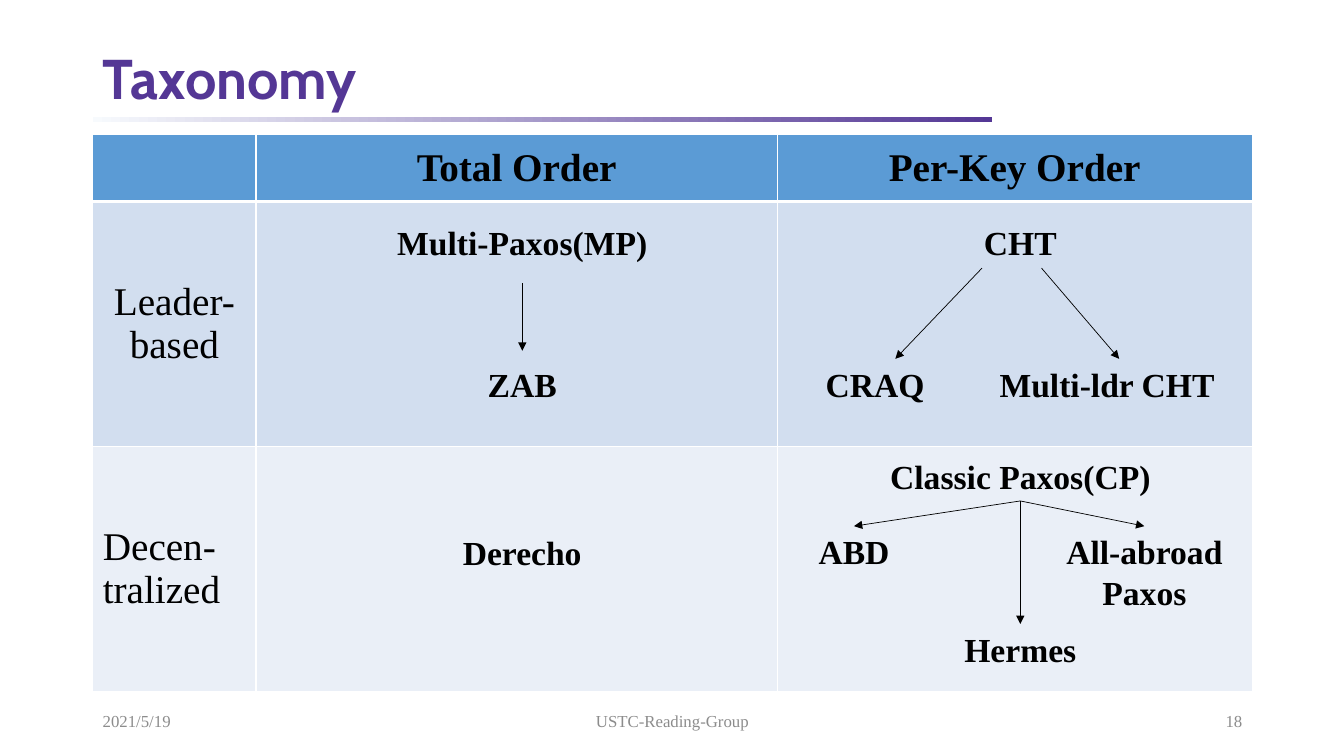
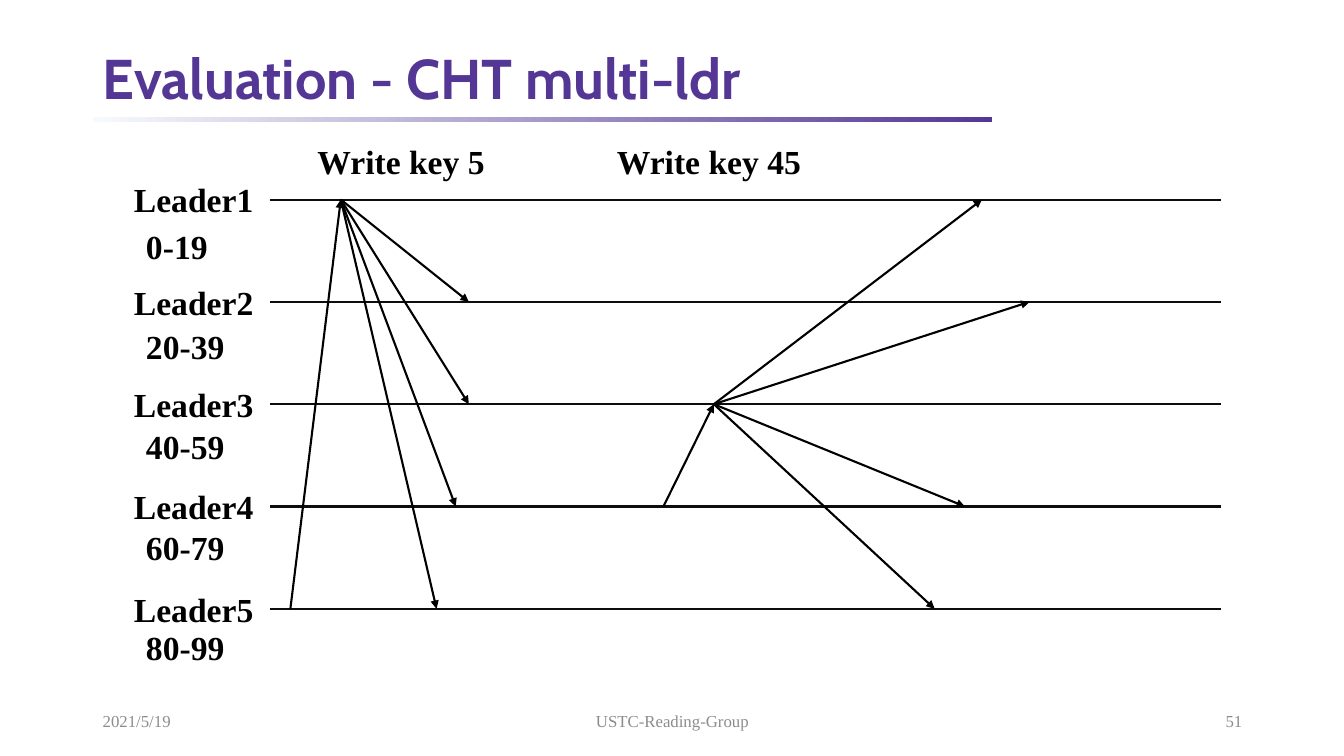
from lxml import etree
from pptx import Presentation
from pptx.dml.color import RGBColor
from pptx.enum.shapes import MSO_CONNECTOR as CONNECTOR, MSO_SHAPE as SHAPE
from pptx.enum.text import MSO_ANCHOR as ANCHOR, MSO_AUTO_SIZE as AUTO_SIZE, PP_ALIGN as ALIGN
from pptx.oxml.ns import qn
from pptx.util import Inches, Pt

# Shared style
COLORS = {"title": "543795", "pale": "F7FAFD", "ink": "000000", "lane": "0D0D0D",
          "footer": "8C8C8C", "white": "FFFFFF"}
ROW_FILLS = ["5B9BD5", "D2DEEF", "EAEFF7"]
SERIF, TITLE_FONT = "Times New Roman", "Cabin"
LEFT, WIDTH = 0.92, 11.5
LABEL_HEIGHT = 0.5
DATE, GROUP = "2021/5/19", "USTC-Reading-Group"

# Taxonomy content
TABLE_TOP = 1.33
COLUMNS, ROWS = [1.62, 5.17, 4.71], [0.67, 2.43, 2.43]
CELLS = [["", "Total Order", "Per-Key Order"],
         ["Leader-based", "", ""],
         ["Decen-tralized", "", ""]]
# name: centre, top, width, height
PROTOCOLS = {
    "Multi-Paxos(MP)": (5.18, 2.15, 2.97, 0.5),
    "ZAB": (5.18, 3.56, 2.97, 0.5),
    "CHT": (10.12, 2.15, 1.71, 0.5),
    "CRAQ": (8.68, 3.56, 1.71, 0.5),
    "Multi-ldr CHT": (10.98, 3.56, 2.48, 0.5),
    "Derecho": (5.18, 5.23, 2.97, 0.5),
    "Classic Paxos(CP)": (10.12, 4.47, 2.97, 0.5),
    "All-abroad Paxos": (11.35, 5.22, 1.79, 0.91),
    "ABD": (8.47, 5.22, 1.71, 0.5),
    "Hermes": (10.12, 6.19, 1.71, 0.5),
}
FREE_ARROWS = [((5.18, 2.81), (5.18, 3.48)),
               ((9.74, 2.66), (8.88, 3.56)),
               ((10.33, 2.66), (11.1, 3.56))]
JOINED_ARROWS = [("Classic Paxos(CP)", child) for child in ("ABD", "Hermes", "All-abroad Paxos")]

# Evaluation content
KEY_RANGES = ["0-19", "20-39", "40-59", "60-79", "80-99"]
LANE_TOP, LANE_STEP, LANE_START, LANE_END = 1.98, 1.015, 2.68, 12.11
RANGE_TOP, RANGE_STEP = 2.19, 0.995
# Points are (x, lane)
WRITES = [
    {"label": "Write key 5", "left": 3.05, "client": (2.88, 4), "leader": (3.38, 0),
     "followers": [(4.33, 4), (4.52, 3), (4.65, 2), (4.65, 1)]},
    {"label": "Write key 45", "left": 6.02, "client": (6.58, 3), "leader": (7.08, 2),
     "followers": [(9.27, 4), (9.57, 3), (9.74, 0), (10.21, 1)]},
]


def rgb(name):
    return RGBColor.from_string(COLORS.get(name, name))


def write(frame, text, size, color="ink", bold=False, align=ALIGN.LEFT, font=SERIF):
    paragraph = frame.paragraphs[0]
    paragraph.alignment = align
    run = paragraph.add_run()
    run.text = text
    run.font.name, run.font.size, run.font.bold = font, Pt(size), bold
    run.font.color.rgb = rgb(color)
    return paragraph


def add_text(slide, box, text, size, anchor=ANCHOR.MIDDLE, **style):
    shape = slide.shapes.add_textbox(*map(Inches, box))
    frame = shape.text_frame
    frame.word_wrap = True
    frame.vertical_anchor = anchor
    paragraph = write(frame, text, size, **style)
    return shape, paragraph


def add_label(slide, box, text, align=ALIGN.LEFT):
    shape, _ = add_text(slide, box, text, 24, ANCHOR.TOP, bold=True, align=align)
    shape.text_frame.auto_size = AUTO_SIZE.SHAPE_TO_FIT_TEXT
    return shape


def add_line(slide, start, end, width, color="ink", arrow=True):
    line = slide.shapes.add_connector(CONNECTOR.STRAIGHT, *map(Inches, (*start, *end)))
    line.line.width = Pt(width)
    line.line.color.rgb = rgb(color)
    if arrow:
        etree.SubElement(line.line._get_or_add_ln(), qn("a:tailEnd"), type="triangle")
    etree.SubElement(line._element.spPr, qn("a:effectLst"))
    return line


def add_page(presentation, title, number):
    slide = presentation.slides.add_slide(presentation.slide_layouts[6])
    # Gradient rule and title
    rule = slide.shapes.add_shape(SHAPE.RECTANGLE, *map(Inches, (LEFT, 1.16, 8.92, 0.05)))
    rule.shadow.inherit = False
    rule.line.fill.background()
    rule.fill.gradient()
    rule.fill.gradient_angle = 0
    for stop, color, position in zip(rule.fill.gradient_stops, ("pale", "title"), (0, 1)):
        stop.color.rgb = rgb(color)
        stop.position = position
    _, paragraph = add_text(slide, (LEFT, 0.43, WIDTH, 0.75), title, 40,
                            color="title", bold=True, font=TITLE_FONT)
    paragraph.line_spacing = 0.9
    # Footer
    for left, width, text, align in ((LEFT, 3, DATE, ALIGN.LEFT),
                                     (4.42, 4.5, GROUP, ALIGN.CENTER),
                                     (LEFT + WIDTH - 3, 3, str(number), ALIGN.RIGHT)):
        add_text(slide, (left, 6.95, width, 0.4), text, 12, color="footer", align=align)
    return slide


def add_borders(cell, bottom):
    properties = cell._tc.get_or_add_tcPr()
    for index, (side, width) in enumerate((("L", 1), ("R", 1), ("T", 1), ("B", bottom))):
        border = etree.Element(qn(f"a:ln{side}"), w=str(Pt(width)))
        fill = etree.SubElement(border, qn("a:solidFill"))
        etree.SubElement(fill, qn("a:srgbClr"), val=COLORS["white"])
        properties.insert(index, border)


def add_taxonomy_table(slide):
    frame = slide.shapes.add_table(len(ROWS), len(COLUMNS), *map(
        Inches, (LEFT, TABLE_TOP, sum(COLUMNS), sum(ROWS))))
    table = frame.table
    table.first_row = table.horz_banding = False
    for column, width in zip(table.columns, COLUMNS):
        column.width = Inches(width)
    for r, height in enumerate(ROWS):
        table.rows[r].height = Inches(height)
        for c, text in enumerate(CELLS[r]):
            cell = table.cell(r, c)
            cell.fill.solid()
            cell.fill.fore_color.rgb = rgb(ROW_FILLS[r])
            cell.vertical_anchor = ANCHOR.MIDDLE
            add_borders(cell, 3 if r == 0 else 1)
            if text:
                write(cell.text_frame, text, 28, bold=r == 0,
                      align=ALIGN.LEFT if r == 2 else ALIGN.CENTER)


def build_taxonomy(presentation):
    slide = add_page(presentation, "Taxonomy", 18)
    add_taxonomy_table(slide)
    labels = {name: add_label(slide, (center - width / 2, top, width, height), name, ALIGN.CENTER)
              for name, (center, top, width, height) in PROTOCOLS.items()}
    for start, end in FREE_ARROWS:
        add_line(slide, start, end, 0.5)
    for parent, child in JOINED_ARROWS:
        arrow = add_line(slide, (0, 0), (1, 1), 0.5)
        arrow.begin_connect(labels[parent], 2)
        arrow.end_connect(labels[child], 0)


def build_evaluation(presentation):
    slide = add_page(presentation, "Evaluation - CHT multi-ldr", 51)

    def on_lane(point):
        x, lane = point
        return x, LANE_TOP + lane * LANE_STEP

    # Leaders with their key ranges
    for lane, key_range in enumerate(KEY_RANGES):
        start, end = on_lane((LANE_START, lane)), on_lane((LANE_END, lane))
        add_line(slide, start, end, 1.5, "lane", arrow=False)
        add_label(slide, (1.23, start[1] - LABEL_HEIGHT / 2, 1.65, LABEL_HEIGHT),
                  f"Leader{lane + 1}")
        add_label(slide, (1.35, RANGE_TOP + lane * RANGE_STEP, 1.43, LABEL_HEIGHT), key_range)
    # Messages of each write
    for item in WRITES:
        leader = on_lane(item["leader"])
        for follower in item["followers"]:
            add_line(slide, leader, on_lane(follower), 1.5)
        add_line(slide, on_lane(item["client"]), leader, 1.5)
        add_label(slide, (item["left"], 1.35, 2.4, LABEL_HEIGHT), item["label"])


def main():
    presentation = Presentation()
    presentation.slide_width, presentation.slide_height = Inches(13.33), Inches(7.5)
    build_taxonomy(presentation)
    build_evaluation(presentation)
    presentation.save("out.pptx")


if __name__ == "__main__":
    main()
